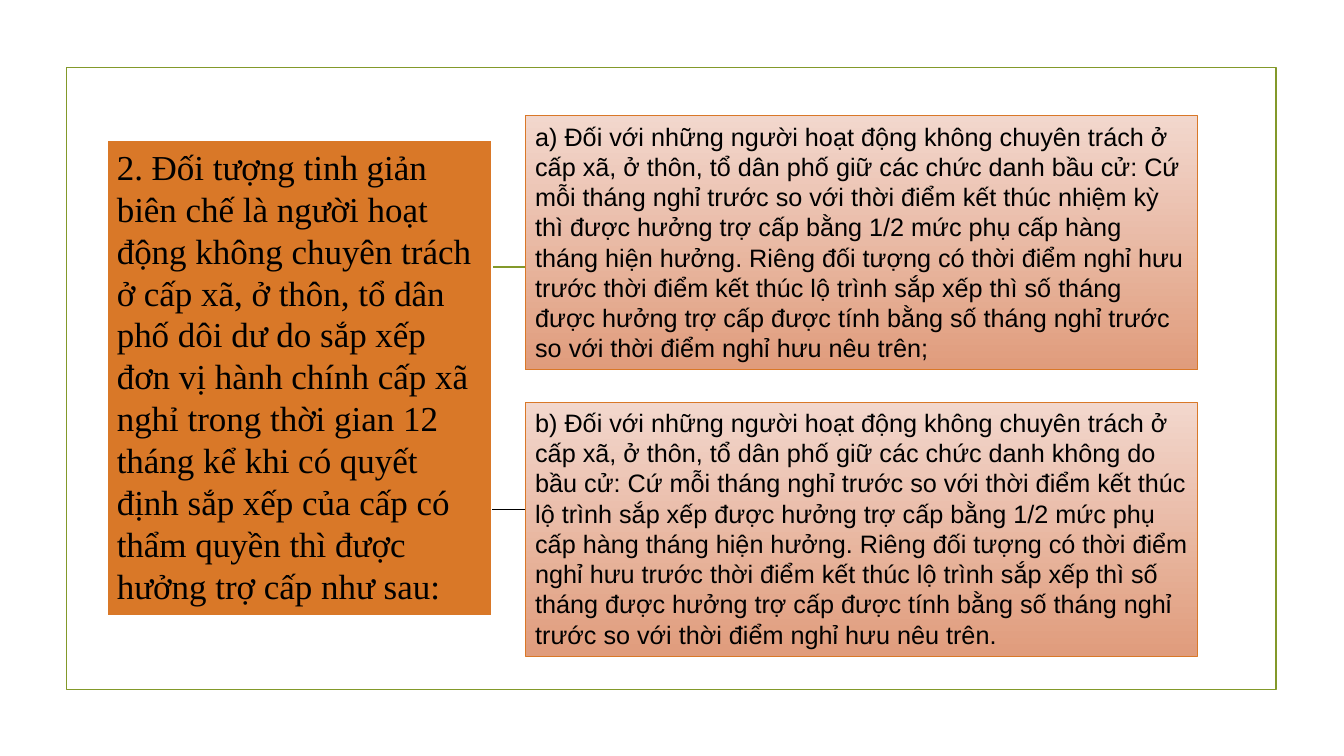
from dataclasses import dataclass

from lxml import etree
from pptx import Presentation
from pptx.dml.color import RGBColor
from pptx.enum.shapes import MSO_CONNECTOR, MSO_SHAPE
from pptx.enum.text import MSO_ANCHOR, MSO_AUTO_SIZE, PP_ALIGN
from pptx.oxml.ns import qn
from pptx.util import Emu, Pt

RECTANGLE = MSO_SHAPE.RECTANGLE
STRAIGHT = MSO_CONNECTOR.STRAIGHT
GROW = MSO_AUTO_SIZE.SHAPE_TO_FIT_TEXT
TOP = MSO_ANCHOR.TOP
LEFT = PP_ALIGN.LEFT

PX = 9144  # 100 px to the inch
PAGE_WIDTH, PAGE_HEIGHT = 1333, 750
COLORS = {
    "green": "83992A",
    "orange": "D97828",
    "peach_light": "F2D7CD",
    "peach_dark": "E09C7C",
    "white": "FFFFFF",
    "black": "000000",
}


@dataclass(frozen=True)
class Panel:
    left: int
    top: int
    width: int
    height: int
    fills: tuple[str, ...]  # none, one solid colour, or two gradient ends
    line_color: str
    line_width: float
    text: str = ""
    font_name: str = "Arial"
    font_size: int = 18


@dataclass(frozen=True)
class Rule:
    left: int
    right: int
    y: int
    color: str
    width: float


def color(name: str) -> RGBColor:
    return RGBColor.from_string(COLORS[name])


def set_line(line, color_name: str, width: float) -> None:
    line.color.rgb = color(color_name)
    line.width = Pt(width)


def set_fill(fill, names: tuple[str, ...]) -> None:
    if not names:
        fill.background()
    elif len(names) == 1:
        fill.solid()
        fill.fore_color.rgb = color(names[0])
    else:
        fill.gradient()
        fill.gradient_angle = 270
        for stop, name in zip(fill.gradient_stops, names):
            stop.color.rgb = color(name)


def write_text(box, panel: Panel) -> None:
    frame = box.text_frame
    frame_format = {"word_wrap": True, "auto_size": GROW, "vertical_anchor": TOP}
    for name, value in frame_format.items():
        setattr(frame, name, value)
    para = frame.paragraphs[0]
    para.alignment = LEFT
    span = para.add_run()
    span.text = panel.text
    font_format = {"name": panel.font_name, "size": Pt(panel.font_size)}
    for name, value in font_format.items():
        setattr(span.font, name, value)
    span.font.color.rgb = color("black")


def draw_panel(page, panel: Panel) -> None:
    sides = (panel.left, panel.top, panel.width, panel.height)
    box = page.shapes.add_shape(RECTANGLE, *(Emu(side * PX) for side in sides))
    box.shadow.inherit = False
    set_fill(box.fill, panel.fills)
    set_line(box.line, panel.line_color, panel.line_width)
    if panel.text:
        write_text(box, panel)


def draw_rule(page, rule: Rule) -> None:
    ends = (rule.left, rule.y, rule.right, rule.y)
    connector = page.shapes.add_connector(STRAIGHT, *(Emu(end * PX) for end in ends))
    set_line(connector.line, rule.color, rule.width)
    etree.SubElement(connector._element.spPr, qn("a:effectLst"))


SUBJECT_TEXT = (
    "2. Đối tượng tinh giản biên chế là người hoạt động không chuyên trách ở cấp xã, "
    "ở thôn, tổ dân phố dôi dư do sắp xếp đơn vị hành chính cấp xã nghỉ trong thời "
    "gian 12 tháng kể khi có quyết định sắp xếp của cấp có thẩm quyền thì được "
    "hưởng trợ cấp như sau:"
)
CASE_TEXTS = (
    "a) Đối với những người hoạt động không chuyên trách ở cấp xã, ở thôn, tổ dân phố "
    "giữ các chức danh bầu cử: Cứ mỗi tháng nghỉ trước so với thời điểm kết thúc "
    "nhiệm kỳ thì được hưởng trợ cấp bằng 1/2 mức phụ cấp hàng tháng hiện hưởng. "
    "Riêng đối tượng có thời điểm nghỉ hưu trước thời điểm kết thúc lộ trình sắp xếp "
    "thì số tháng được hưởng trợ cấp được tính bằng số tháng nghỉ trước so với thời "
    "điểm nghỉ hưu nêu trên;",
    "b) Đối với những người hoạt động không chuyên trách ở cấp xã, ở thôn, tổ dân phố "
    "giữ các chức danh không do bầu cử: Cứ mỗi tháng nghỉ trước so với thời điểm kết "
    "thúc lộ trình sắp xếp được hưởng trợ cấp bằng 1/2 mức phụ cấp hàng tháng hiện "
    "hưởng. Riêng đối tượng có thời điểm nghỉ hưu trước thời điểm kết thúc lộ trình "
    "sắp xếp thì số tháng được hưởng trợ cấp được tính bằng số tháng nghỉ trước so "
    "với thời điểm nghỉ hưu nêu trên.",
)
CASE_TOP, CASE_PITCH = 115, 284

BORDER = Panel(66, 67, 1200, 617, (), "green", 1.25)
SUBJECT = Panel(106, 139, 382, 473, ("orange",), "white", 2,
                SUBJECT_TEXT, "Times New Roman", 25)
CASES = [
    Panel(521, CASE_TOP + index * CASE_PITCH, 667, 252,
          ("peach_light", "peach_dark"), "orange", 0.75, text)
    for index, text in enumerate(CASE_TEXTS)
]
TITLE_RULE = Rule(153, 1181, 265, "green", 1.25)
CASE_RULE = Rule(SUBJECT.left + SUBJECT.width, CASES[1].left, 505, "black", 0.75)


def main() -> None:
    deck = Presentation()
    deck.slide_width = Emu(PAGE_WIDTH * PX)
    deck.slide_height = Emu(PAGE_HEIGHT * PX)
    page = deck.slides.add_slide(deck.slide_layouts[6])
    page.background.fill.solid()
    page.background.fill.fore_color.rgb = color("white")

    draw_panel(page, BORDER)
    draw_rule(page, TITLE_RULE)
    for panel in (SUBJECT, *CASES):
        draw_panel(page, panel)
    draw_rule(page, CASE_RULE)
    deck.save("out.pptx")


if __name__ == "__main__":
    main()
